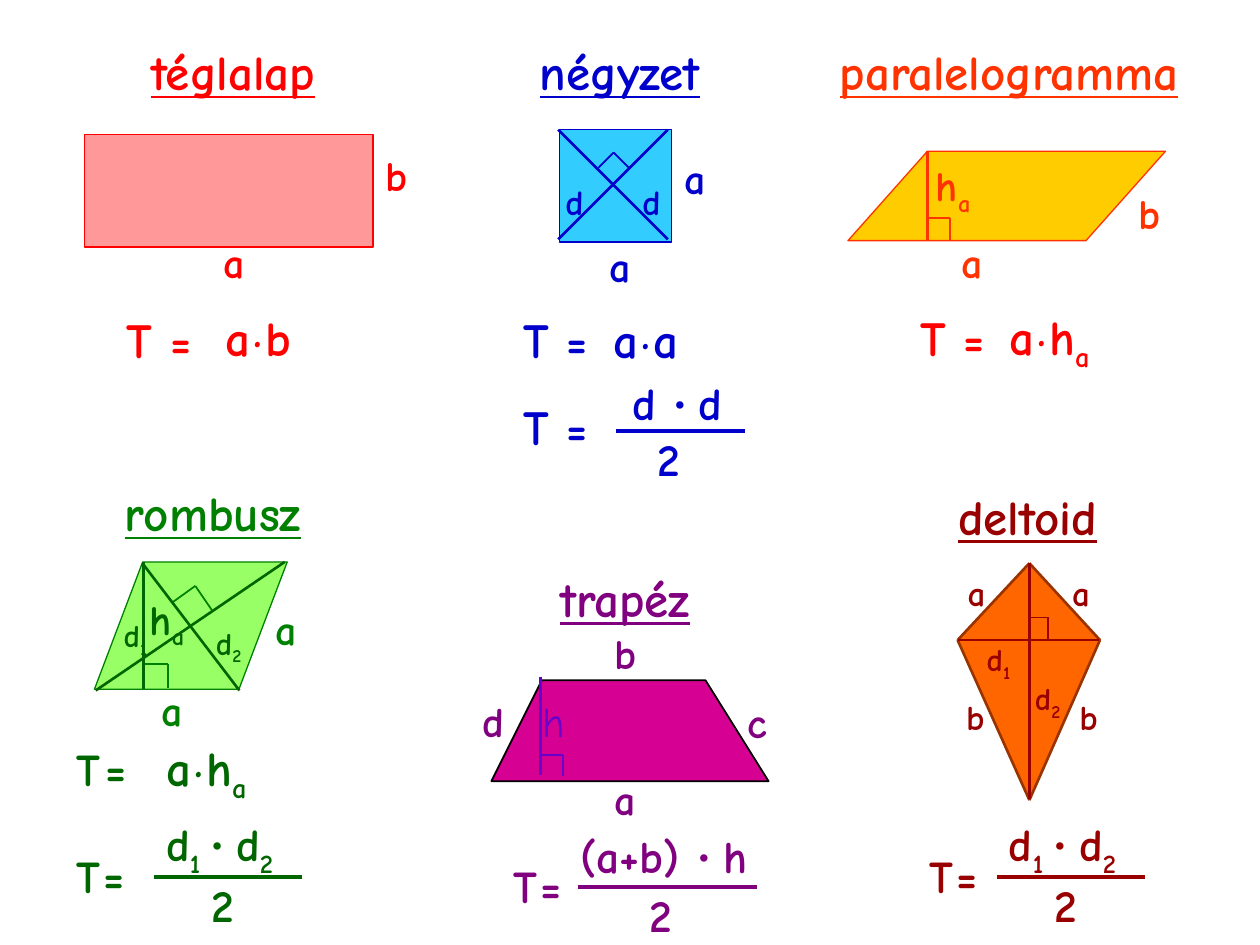
"""Builds a one-page overview of quadrilaterals and their area formulas."""
import dataclasses

import lxml.etree
import pptx
import pptx.dml.color
import pptx.enum.shapes
import pptx.enum.text
import pptx.oxml.ns
import pptx.util

SHAPE = pptx.enum.shapes.MSO_SHAPE
ALIGN = pptx.enum.text.PP_ALIGN


@dataclasses.dataclass(frozen=True)
class Theme:
    """Fonts, colours and type sizes of the slide."""
    font: str = "Comic Neue"
    dot_font: str = "Times New Roman"
    red: str = "FF0000"
    pink: str = "FF9999"
    blue: str = "0000CC"
    sky: str = "33CCFF"
    orange: str = "FF3300"
    yellow: str = "FFCC00"
    green: str = "008000"
    dark_green: str = "006600"
    lime: str = "99FF66"
    purple: str = "800080"
    violet: str = "6600CC"
    magenta: str = "D60093"
    black: str = "000000"
    maroon: str = "990000"
    brown: str = "993300"
    flame: str = "FF6600"
    heading: int = 28
    fraction: int = 26
    side: int = 24
    small: int = 20
    diagonal: int = 18
    gap: int = 5
    hairline: float = 0.75
    thin: float = 1
    medium: float = 1.5
    thick: float = 2.25


class Board:
    """Draws on a slide split into 100 columns and 75 rows, in the current ink."""

    def __init__(self, deck, theme):
        """Opens a page with five heading placeholders."""
        self.theme = theme
        self.ink = theme.black
        self.page = deck.slides.add_slide(deck.slide_layouts[4])
        self.column = deck.slide_width / 100
        self.row = deck.slide_height / 75
        self.headings = [box for box in self.page.placeholders
                         if box.placeholder_format.idx < 10]

    def place(self, left, top, width, height):
        """Turns columns and rows into lengths."""
        return [round(left * self.column), round(top * self.row),
                round(width * self.column), round(height * self.row)]

    def colour(self, value=None):
        """Gives a colour, by default the current ink."""
        return pptx.dml.color.RGBColor.from_string(value or self.ink)

    def typeset(self, box, spans, size, align, underline=None, bold=True):
        """Fills a box; '_' starts a subscript and a pair sets its own size."""
        frame = box.text_frame
        frame.vertical_anchor = pptx.enum.text.MSO_ANCHOR.TOP
        para = frame.paragraphs[0]
        para.alignment = align
        para.space_before = pptx.util.Pt(0)
        para.line_spacing = 1.0
        for item in spans:
            text, points = item if isinstance(item, tuple) else (item, size)
            span = para.add_run()
            span.text = text.lstrip("_")
            span.font.name = self.theme.dot_font if text == "· " else self.theme.font
            span.font.size = pptx.util.Pt(points)
            span.font.bold = bold
            span.font.underline = underline
            span.font.color.rgb = self.colour()
            if text.startswith("_"):
                span.font._element.set("baseline", "-25000")

    def heading(self, text, left, top, width):
        """Moves the next heading placeholder into place, or adds a box when none is left."""
        area = self.place(left, top, width, 5.2)
        if self.headings:
            box = self.headings.pop(0)
            box.left, box.top, box.width, box.height = area
        else:
            box = self.page.shapes.add_textbox(*area)
        box.text_frame.word_wrap = True
        box.text_frame.auto_size = pptx.enum.text.MSO_AUTO_SIZE.NONE
        self.typeset(box, [text], self.theme.heading, ALIGN.CENTER, underline=True)
        style = box.text_frame.paragraphs[0]._p.get_or_add_pPr()
        style.set("marL", "0")
        style.set("indent", "0")
        lxml.etree.SubElement(style, pptx.oxml.ns.qn("a:buNone"))

    def text(self, spans, left, top, width, size, align=ALIGN.LEFT, bold=True):
        """Adds a one-line text box; centred text keeps its middle."""
        box = self.page.shapes.add_textbox(*self.place(left, top, width, size * 0.2 + 0.2))
        box.text_frame.word_wrap = align == ALIGN.LEFT
        self.typeset(box, spans, size, align, bold=bold)

    def label(self, spans, middle, top, size=None):
        """Names a side or a diagonal around a middle column."""
        self.text(spans, middle - 2.5, top, 5, size or self.theme.side, ALIGN.CENTER)

    def area_sign(self, left, top, size, gap):
        """Sets the left-hand side of an area formula."""
        self.text(["T", (" ", gap), ("=", self.theme.fraction)], left, top, 13.4, size)

    def product(self, left, top, *factor):
        """Sets a times another factor."""
        gap = (" ", self.theme.gap)
        self.text(["a", gap, ("·", self.theme.fraction), gap, *factor],
                  left, top, 11.8, self.theme.heading)

    def fraction(self, left, top, width, spans, shift=0, drop=0, half=3.6):
        """Sets a numerator over a bar and the number two."""
        self.lines(self.theme.thick, (left, top), (left + width, top))
        self.text(spans, left + shift, top - 5.3 + drop, 16.4, self.theme.fraction)
        self.text(["2"], left + half, top - 0.5, 4.7, self.theme.fraction)

    def lines(self, weight, *points):
        """Joins the points with straight lines."""
        for start, end in zip(points, points[1:]):
            ends = self.place(*start, *end)
            line = self.page.shapes.add_connector(
                pptx.enum.shapes.MSO_CONNECTOR.STRAIGHT, *ends)
            line.line.width = pptx.util.Pt(weight)
            line.line.color.rgb = self.colour()
            lxml.etree.SubElement(line._element.spPr, pptx.oxml.ns.qn("a:effectLst"))

    def paint(self, shape, fill, weight):
        """Sets fill and outline; no weight means no outline."""
        shape.shadow.inherit = False
        shape.fill.solid()
        shape.fill.fore_color.rgb = self.colour(fill)
        if weight:
            shape.line.width = pptx.util.Pt(weight)
            shape.line.color.rgb = self.colour()
        else:
            shape.line.fill.background()

    def figure(self, kind, fill, left, top, width, height, weight=0, slant=None, turn=0):
        """Adds a preset figure."""
        shape = self.page.shapes.add_shape(kind, *self.place(left, top, width, height))
        if slant is not None:
            shape.adjustments[0] = slant
        shape.rotation = turn
        self.paint(shape, fill, weight)

    def polygon(self, fill, weight, start, *corners):
        """Adds a closed outline."""
        builder = self.page.shapes.build_freeform(*start, scale=(self.column, self.row))
        builder.add_line_segments(corners, close=True)
        self.paint(builder.convert_to_shape(), fill, weight)


def draw_top(board, theme):
    """Draws rectangle, square and parallelogram."""
    board.ink = theme.red
    board.heading("téglalap", 4.3, 2.8, 28.4)
    board.figure(SHAPE.RECTANGLE, theme.pink, 6.7, 10.7, 22.9, 8.9, theme.hairline)
    board.label(["a"], 18.55, 18.3)
    board.label(["b"], 31.5, 11.4)
    board.area_sign(9.1, 24.1, theme.heading, 28)
    board.product(16.9, 23.9, "b")
    board.area_sign(72.1, 23.9, theme.heading, 28)
    board.product(79.1, 23.8, "h", "_a")
    board.ink = theme.blue
    board.heading("négyzet", 38.2, 2.8, 22)
    board.figure(SHAPE.RECTANGLE, theme.sky, 44.4, 10.3, 8.9, 8.9, theme.hairline)
    board.lines(theme.medium, (44.3, 19), (53, 10.3))
    board.lines(theme.medium, (44.3, 10.3), (53, 19))
    board.lines(theme.thin, (47.5, 13.3), (48.7, 12.1), (49.9, 13.3))
    board.label(["a"], 49.2, 18.6)
    board.label(["a"], 55.15, 11.6)
    for middle in (45.6, 51.7):
        board.label(["d"], middle, 13.85, theme.small)
    for top in (24.1, 31):
        board.area_sign(40.6, top, theme.heading, 28)
    board.product(47.7, 24.1, "a")
    board.fraction(48.9, 34.2, 10.2, ["d ", "· ", "d"], 0.3, 0.4, 2.3)
    board.ink = theme.orange
    board.heading("paralelogramma", 64.6, 2.8, 31)
    board.figure(SHAPE.PARALLELOGRAM, theme.yellow, 67.3, 12, 25.2, 7.1, theme.hairline, 0.889)
    board.lines(theme.medium, (73.6, 12), (73.6, 19.1))
    board.lines(theme.thin, (73.6, 17.3), (75.4, 17.3), (75.4, 19.1))
    board.label(["a"], 77.15, 18.3)
    board.label(["b"], 91.25, 14.4)
    board.text(["h", "_a"], 73.3, 12.2, 6.5, theme.side)


def draw_bottom(board, theme):
    """Draws rhombus, trapezoid and kite."""
    halved_diagonals = ["d", "_1 ", "· ", "d", "_2"]
    board.ink = theme.green
    board.heading("rombusz", 5.9, 37.8, 22)
    board.figure(SHAPE.PARALLELOGRAM, theme.lime, 7.5, 44.6, 15.3, 10.1, theme.hairline, 0.379)
    board.label(["a"], 13.7, 53.8)
    board.label(["a"], 22.7, 47.4)
    board.lines(theme.medium, (11.4, 52.7), (13.35, 52.7), (13.35, 54.6))
    board.lines(theme.thin, (13.7, 47.8), (15.5, 46.5), (16.8, 48.4))
    board.ink = theme.dark_green
    board.lines(theme.medium, (11.4, 44.6), (11.4, 54.7))
    board.text(["h", "_a"], 10.9, 46.6, 6, theme.side)
    board.lines(theme.medium, (7.6, 54.8), (22.6, 44.6))
    board.lines(theme.medium, (11.3, 44.7), (19, 54.8))
    board.label(["d", "_2"], 18.15, 49, theme.diagonal)
    board.label(["d", "_1"], 10.75, 48.4, theme.diagonal)
    board.area_sign(5.1, 58.3, theme.fraction, 8)
    board.product(12.2, 58, "h", "_a")
    board.area_sign(5.1, 66.8, theme.fraction, theme.gap)
    board.fraction(12.2, 69.6, 11.8, halved_diagonals)
    board.ink = theme.black
    board.polygon(theme.magenta, theme.thin, (39.4, 61.6), (61.1, 61.6), (56.1, 53.8), (42.8, 53.8))
    board.ink = theme.purple
    board.heading("trapéz", 38.6, 44.6, 22)
    for name, middle, top in (("a", 49.65, 60.9), ("b", 49.65, 49.3),
                              ("c", 60.1, 54.8), ("d", 39.2, 54.7)):
        board.label([name], middle, top)
    board.area_sign(39.8, 67.6, theme.fraction, theme.gap)
    board.fraction(45.9, 70.4, 14.2, ["(a+b) ", "· ", "h"], -0.8, 0.1, 4.7)
    board.ink = theme.violet
    board.lines(theme.medium, (42.9, 53.7), (42.9, 61.5))
    board.lines(theme.thin, (42.9, 59.9), (44.7, 59.9), (44.7, 61.6))
    board.text(["h"], 42.1, 54.7, 5.1, theme.side, bold=False)
    board.figure(SHAPE.ISOSCELES_TRIANGLE, theme.flame, 76, 44.7, 11.4, 6.1)
    board.figure(SHAPE.ISOSCELES_TRIANGLE, theme.flame, 76, 50.7, 11.4, 12.8, turn=180)
    board.ink = theme.brown
    board.lines(theme.medium, (76, 50.8), (81.7, 44.7), (87.3, 50.8), (81.7, 63.5), (76, 50.8))
    board.ink = theme.maroon
    board.heading("deltoid", 74, 38.1, 15.1)
    board.lines(theme.medium, (76, 50.8), (87.2, 50.8))
    board.lines(theme.medium, (81.7, 44.7), (81.7, 63.4))
    board.lines(theme.thin, (81.7, 49), (83.2, 49), (83.2, 50.7))
    for name, middle, top in (("a", 77.5, 44.9), ("a", 85.8, 44.9),
                              ("b", 77.4, 54.7), ("b", 86.4, 54.7)):
        board.label([name], middle, top, theme.small)
    board.label(["d", "_2"], 83.15, 53.4, theme.diagonal)
    board.label(["d", "_1"], 79.25, 50.3, theme.diagonal)
    board.area_sign(72.8, 66.8, theme.fraction, theme.gap)
    board.fraction(79.1, 69.6, 11.8, halved_diagonals)


def main():
    """Builds and saves the deck."""
    deck = pptx.Presentation()
    deck.slide_width, deck.slide_height = pptx.util.Inches(10), pptx.util.Inches(7.5)
    theme = Theme()
    board = Board(deck, theme)
    for box in list(board.page.placeholders):
        if box.placeholder_format.idx >= 10:
            box._element.getparent().remove(box._element)
    draw_top(board, theme)
    draw_bottom(board, theme)
    deck.save("out.pptx")


if __name__ == "__main__":
    main()
